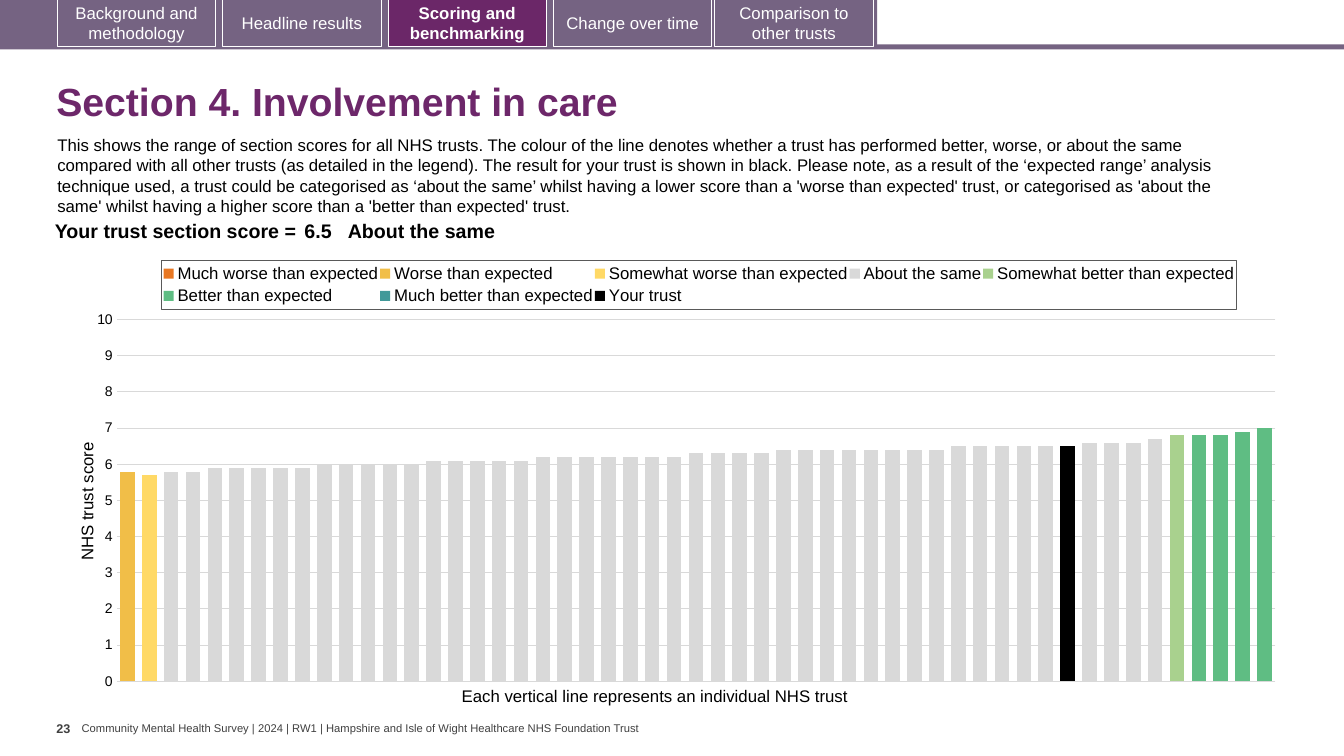
from copy import deepcopy

from pptx import Presentation
from pptx.chart.data import CategoryChartData
from pptx.dml.color import RGBColor
from pptx.enum.chart import XL_CHART_TYPE as ChartType, XL_LEGEND_POSITION as LegendPosition
from pptx.enum.chart import XL_TICK_MARK as TickMark
from pptx.enum.shapes import MSO_SHAPE as ShapeKind
from pptx.enum.text import MSO_ANCHOR as Anchor, PP_ALIGN as Align
from pptx.oxml import parse_xml
from pptx.oxml.ns import nsdecls, qn
from pptx.util import Pt

PX = 9144
TRUST_COUNT = 53
PURPLE, MAUVE, BLACK, GREY, WHITE = "6D276A", "756382", "000000", "404040", "FFFFFF"
TABS = [
    (57, "Background and methodology"),
    (221, "Headline results"),
    (385, "Scoring and benchmarking"),
    (549, "Change over time"),
    (709, "Comparison to other trusts"),
]
ACTIVE_TAB = "Scoring and benchmarking"
INTRO = (
    "This shows the range of section scores for all NHS trusts. The colour of the line denotes "
    "whether a trust has performed better, worse, or about the same compared with all other trusts "
    "(as detailed in the legend). The result for your trust is shown in black. Please note, as a "
    "result of the ‘expected range’ analysis technique used, a trust could be categorised as ‘about "
    "the same’ whilst having a lower score than a 'worse than expected' trust, or categorised as "
    "'about the same' whilst having a higher score than a 'better than expected' trust."
)
SAME_SCORES = (
    [5.8] * 2 + [5.9] * 5 + [6] * 5 + [6.1] * 5 + [6.2] * 7 + [6.3] * 4
    + [6.4] * 8 + [6.5] * 6 + [6.6] * 3 + [6.7]
)
SERIES = [
    ("Much worse than expected", "E87722", 0, []),
    ("Worse than expected", "F1BE48", 0, [5.8]),
    ("Somewhat worse than expected", "FFD966", 1, [5.7]),
    ("About the same", "D9D9D9", 2, SAME_SCORES),
    ("Somewhat better than expected", "A9D18E", 48, [6.8]),
    ("Better than expected", "5FBD83", 49, [6.8, 6.8, 6.9, 7]),
    ("Much better than expected", "419999", 0, []),
    ("Your trust", BLACK, 43, [6.5]),
]


def colour(value):
    """Turn a hex string into a colour."""
    return RGBColor.from_string(value)


def scaled(box):
    """Turn a box in px into EMU."""
    return [length * PX for length in box]


def set_font(font, size, hex_colour, bold=False):
    """Set Arial with the given size, colour and weight."""
    font.name, font.size, font.bold = "Arial", Pt(size), bold
    font.color.rgb = colour(hex_colour)


def set_insets(holder, left, top, right, bottom):
    """Set the four margins of a text frame or cell in px."""
    holder.margin_left, holder.margin_top = left * PX, top * PX
    holder.margin_right, holder.margin_bottom = right * PX, bottom * PX


def add_text(slide, box, text, size, hex_colour, bold=False, wrap=True, insets=(10, 5, 10, 5), anchor=Anchor.TOP):
    """Place a text box and return its paragraph."""
    frame = slide.shapes.add_textbox(*scaled(box)).text_frame
    frame.word_wrap, frame.vertical_anchor = wrap, anchor
    set_insets(frame, *insets)
    frame.text = text
    paragraph = frame.paragraphs[0]
    set_font(paragraph.runs[0].font, size, hex_colour, bold)
    return paragraph


def add_rectangle(slide, box, fill, line=None):
    """Place a flat rectangle."""
    shape = slide.shapes.add_shape(ShapeKind.RECTANGLE, *scaled(box))
    shape.shadow.inherit = False
    shape.fill.solid()
    shape.fill.fore_color.rgb = colour(fill)
    if line:
        shape.line.color.rgb = colour(line)
        shape.line.width = Pt(0.75)
    else:
        shape.line.fill.background()
    return shape


def add_navigation(slide, left, top, width):
    """Draw the band of section tabs."""
    add_rectangle(slide, (left, top + 44, width, 5), MAUVE)
    add_rectangle(slide, (left, top, 870, 47), MAUVE)
    for offset, label in TABS:
        active = label == ACTIVE_TAB
        tab = add_rectangle(slide, (left + offset, top - 1, 157, 47), "6B2768" if active else MAUVE, WHITE)
        frame = tab.text_frame
        frame.word_wrap, frame.vertical_anchor = True, Anchor.MIDDLE
        frame.text = label
        frame.paragraphs[0].alignment = Align.CENTER
        set_font(frame.paragraphs[0].runs[0].font, 12, WHITE, active)


def add_heading(slide, left, top):
    """Write the section title and its introduction."""
    title = add_text(slide, (left, top, 1249, 72), "Section 4. Involvement in care", 28, PURPLE, True, anchor=Anchor.MIDDLE)
    title.line_spacing = 0.9
    add_text(slide, (left + 1, top + 62, 1213, 91), INTRO, 12, BLACK)


def add_score(slide, left, top):
    """Add the one-row table with the trust score."""
    columns = [
        (263, "Your trust section score =", Align.RIGHT, 4),
        (47, "6.5", Align.LEFT, 4),
        (859, "About the same", Align.LEFT, 0),
    ]
    width = sum(column[0] for column in columns)
    table = slide.shapes.add_table(1, len(columns), *scaled((left, top, width, 31))).table
    table.first_row = table.horz_banding = False
    for index, (column_width, text, alignment, inset) in enumerate(columns):
        table.columns[index].width = column_width * PX
        cell = table.cell(0, index)
        cell.fill.background()
        set_insets(cell, inset, 4, inset, 4)
        cell.text = text
        paragraph = cell.text_frame.paragraphs[0]
        paragraph.alignment = alignment
        set_font(paragraph.runs[0].font, 14, BLACK, True)


def set_layout(parent, index, target="", **fractions):
    """Give a chart part a manual layout in fractions of the chart."""
    for old in parent.findall(qn("c:layout")):
        parent.remove(old)
    inner = f'<c:layoutTarget val="{target}"/>' if target else ""
    modes = '<c:xMode val="edge"/><c:yMode val="edge"/>'
    sizes = "".join(f'<c:{key} val="{value}"/>' for key, value in fractions.items())
    xml = f"<c:layout {nsdecls('c')}><c:manualLayout>{inner}{modes}{sizes}</c:manualLayout></c:layout>"
    parent.insert(index, parse_xml(xml))


def move_last_series_right(plot_area):
    """Put the last series on a second value axis."""
    bars, category, value = (plot_area.find(qn(f"c:{tag}")) for tag in ("barChart", "catAx", "valAx"))
    right_bars, right_category, right_value = map(deepcopy, (bars, category, value))
    bars.remove(bars.findall(qn("c:ser"))[-1])
    for series in right_bars.findall(qn("c:ser"))[:-1]:
        right_bars.remove(series)
    bars.addnext(right_bars)
    value.addnext(right_value)
    right_value.addnext(right_category)
    for tag in ("majorGridlines", "title"):
        right_value.remove(right_value.find(qn(f"c:{tag}")))
    for tag, setting in (("axPos", "r"), ("majorTickMark", "out"), ("tickLblPos", "none"), ("crosses", "max")):
        right_value.find(qn(f"c:{tag}")).set("val", setting)
    for axis, own, other in ((right_category, "5001", "5002"), (right_value, "5002", "5001")):
        axis.find(qn("c:axId")).set("val", own)
        axis.find(qn("c:crossAx")).set("val", other)
    for axis_id, number in zip(right_bars.findall(qn("c:axId")), ("5001", "5002")):
        axis_id.set("val", number)


def add_value_axis(axis):
    """Format the score axis, its grid and its title."""
    axis.minimum_scale, axis.maximum_scale, axis.major_unit = 0, 10, 1
    axis.major_tick_mark = axis.minor_tick_mark = TickMark.NONE
    axis.format.line.fill.background()
    axis.major_gridlines.format.line.color.rgb = colour("D9D9D9")
    axis.major_gridlines.format.line.width = Pt(0.75)
    set_font(axis.tick_labels.font, 10, BLACK)
    frame = axis.axis_title.text_frame
    frame.text = "NHS trust score"
    set_font(frame.paragraphs[0].runs[0].font, 12, BLACK)
    title = axis.axis_title.format and axis.axis_title.element if hasattr(axis.axis_title, "element") else None
    title.find(f".//{qn('a:bodyPr')}").set("rot", "-5400000")
    set_layout(title, 1, x=0.005, y=0.425)


def add_chart(slide, left, top):
    """Add the column chart of trust scores and its caption."""
    data = CategoryChartData()
    data.categories = [str(number + 1) for number in range(TRUST_COUNT)]
    for name, _, start, scores in SERIES:
        data.add_series(name, [None] * start + scores + [None] * (TRUST_COUNT - start - len(scores)))
    chart = slide.shapes.add_chart(ChartType.COLUMN_CLUSTERED, *scaled((left, top, 1215, 444)), data).chart
    chart.has_title = False
    chart.font.name, chart.font.size = "Calibri", Pt(10)
    chart.font.color.rgb = colour(BLACK)
    plot = chart.plots[0]
    plot.gap_width, plot.overlap, plot.vary_by_categories = 50, 100, False
    for series, (_, fill, _, _) in zip(plot.series, SERIES):
        series.format.fill.solid()
        series.format.fill.fore_color.rgb = colour(fill)
    chart.category_axis.visible = False
    add_value_axis(chart.value_axis)
    chart.has_legend = True
    chart.legend.position, chart.legend.include_in_layout = LegendPosition.TOP, False
    set_font(chart.legend.font, 12, BLACK)
    legend = chart.element.find(f".//{qn('c:legend')}")
    set_layout(legend, 1, x=0.077, y=0.025, w=0.877, h=0.11)
    border = '<a:ln w="9525"><a:solidFill><a:srgbClr val="595959"/></a:solidFill></a:ln>'
    legend.find(qn("c:txPr")).addprevious(parse_xml(f"<c:spPr {nsdecls('c', 'a')}>{border}</c:spPr>"))
    plot_area = chart.element.find(f".//{qn('c:plotArea')}")
    set_layout(plot_area, 0, "inner", x=0.04, y=0.158, w=0.946, h=0.808)
    move_last_series_right(plot_area)
    add_text(slide, (left + 381, top + 428, 411, 30), "Each vertical line represents an individual NHS trust", 12, BLACK, wrap=False)


def add_footer(slide, left, top):
    """Write the page number and the survey line."""
    add_text(slide, (left, top, 25, 40), "23", 9, GREY, True, False, (0, 5, 0, 5))
    survey = "Community Mental Health Survey | 2024 | RW1 | Hampshire and Isle of Wight Healthcare NHS Foundation Trust"
    add_text(slide, (left + 25, top + 6, 560, 13), survey, 8, GREY, False, False, (0, 0, 0, 0), Anchor.MIDDLE)


def main():
    """Build the slide and save it."""
    presentation = Presentation()
    presentation.slide_width, presentation.slide_height = 1333 * PX, 750 * PX
    slide = presentation.slides.add_slide(presentation.slide_layouts[6])
    add_navigation(slide, 0, 0, 1333)
    add_heading(slide, 46, 67)
    add_chart(slide, 67, 247)
    add_score(slide, 35, 215)
    add_footer(slide, 56, 710)
    presentation.save("out.pptx")


if __name__ == "__main__":
    main()
